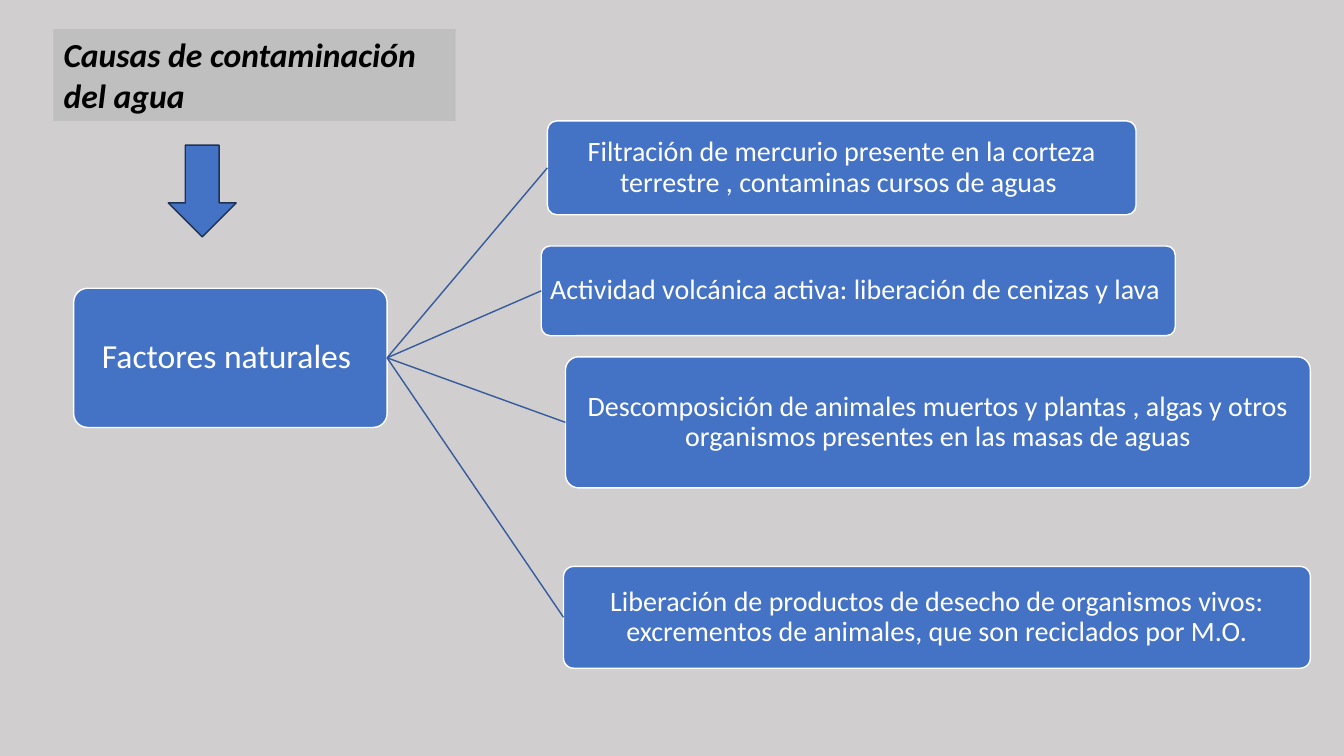
import dataclasses

import lxml.etree
import pptx
import pptx.dml.color
import pptx.enum.shapes
import pptx.enum.text
import pptx.oxml.ns
import pptx.shapes.autoshape
import pptx.slide
import pptx.util

Pt = pptx.util.Pt
SHAPES = pptx.enum.shapes.MSO_SHAPE
ALIGN = pptx.enum.text.PP_ALIGN
ANCHOR = pptx.enum.text.MSO_ANCHOR

FONT = "Calibri"
COLORS = {
    "background": "D0CECE",
    "title_fill": "BFBFBF",
    "title_text": "000000",
    "blue": "4472C4",
    "arrow_line": "1E3256",
    "branch": "365B9D",
    "white": "FFFFFF",
}


@dataclasses.dataclass(frozen=True)
class Box:
    text: str
    left: float
    top: float
    width: float
    height: float
    size: float = 20


FACTORS = Box("Factores naturales ", 52.6, 205.9, 223.9, 99.4, 24)
CAUSES = [
    Box("Filtración de mercurio presente en la corteza terrestre , "
        "contaminas cursos de aguas ", 391, 86.4, 420.5, 67),
    Box("Actividad volcánica activa: liberación de cenizas y lava ",
        386.6, 175.7, 452.9, 64.1),
    Box("Descomposición de animales muertos y plantas , algas y otros "
        "organismos presentes en las masas de aguas", 403.9, 254.9, 532.1, 93.6),
    Box("Liberación de productos de desecho de organismos vivos: excrementos "
        "de animales, que son reciclados por M.O.", 402.5, 404.6, 533.5, 72.7),
]


def rgb(name: str) -> pptx.dml.color.RGBColor:
    return pptx.dml.color.RGBColor.from_string(COLORS[name])


def write(shape: pptx.shapes.autoshape.Shape, text: str, *, size: float, color: str,
          align: ALIGN, spacing: float = 1, inset_x: float = 3, inset_y: float = 3,
          anchor: ANCHOR = ANCHOR.MIDDLE, bold: bool = False,
          italic: bool = False) -> None:
    frame = shape.text_frame
    frame.word_wrap = True
    frame.auto_size = pptx.enum.text.MSO_AUTO_SIZE.NONE
    frame.vertical_anchor = anchor
    frame.margin_left = frame.margin_right = Pt(inset_x)
    frame.margin_top = frame.margin_bottom = Pt(inset_y)
    paragraph = frame.paragraphs[0]
    paragraph.alignment = align
    paragraph.line_spacing = spacing
    paragraph.space_before = Pt(0)
    run = paragraph.add_run()
    run.text = text
    run.font.name = FONT
    run.font.size = Pt(size)
    run.font.bold = bold
    run.font.italic = italic
    run.font.color.rgb = rgb(color)


def paint(shape: pptx.shapes.autoshape.Shape, line: str) -> None:
    shape.shadow.inherit = False
    shape.fill.solid()
    shape.fill.fore_color.rgb = rgb("blue")
    shape.line.color.rgb = rgb(line)
    shape.line.width = Pt(1)


def add_box(slide: pptx.slide.Slide, box: Box) -> pptx.shapes.autoshape.Shape:
    shape = slide.shapes.add_shape(SHAPES.ROUNDED_RECTANGLE, Pt(box.left), Pt(box.top),
                                   Pt(box.width), Pt(box.height))
    shape.adjustments[0] = 0.1
    paint(shape, "white")
    write(shape, box.text, size=box.size, color="white", align=ALIGN.CENTER, spacing=0.9)
    return shape


def add_branch(slide: pptx.slide.Slide, source: pptx.shapes.autoshape.Shape,
               target: pptx.shapes.autoshape.Shape) -> None:
    branch = slide.shapes.add_connector(pptx.enum.shapes.MSO_CONNECTOR.STRAIGHT, 0, 0, 0, 0)
    branch.begin_connect(source, 3)  # right side
    branch.end_connect(target, 1)  # left side
    branch.line.color.rgb = rgb("branch")
    branch.line.width = Pt(1)
    lxml.etree.SubElement(branch._element.spPr, pptx.oxml.ns.qn("a:effectLst"))


def main() -> None:
    presentation = pptx.Presentation()
    presentation.slide_width = Pt(960)
    presentation.slide_height = Pt(540)
    slide = presentation.slides.add_slide(presentation.slide_layouts[5])
    slide.background.fill.solid()
    slide.background.fill.fore_color.rgb = rgb("background")

    # Title
    title = slide.shapes.title
    title.left, title.top, title.width, title.height = Pt(38.2), Pt(20.9), Pt(287.3), Pt(65.5)
    title.fill.solid()
    title.fill.fore_color.rgb = rgb("title_fill")
    write(title, "Causas de contaminación del agua", size=24, color="title_text",
          align=ALIGN.LEFT, inset_x=7.2, inset_y=3.6, anchor=ANCHOR.TOP,
          bold=True, italic=True)

    # Arrow from the title to the factors
    arrow = slide.shapes.add_shape(SHAPES.DOWN_ARROW, Pt(120.2), Pt(103.7), Pt(48.5), Pt(65.5))
    paint(arrow, "arrow_line")

    # Factors and their causes
    factors = add_box(slide, FACTORS)
    for cause in CAUSES:
        add_branch(slide, factors, add_box(slide, cause))

    presentation.save("out.pptx")


if __name__ == "__main__":
    main()
